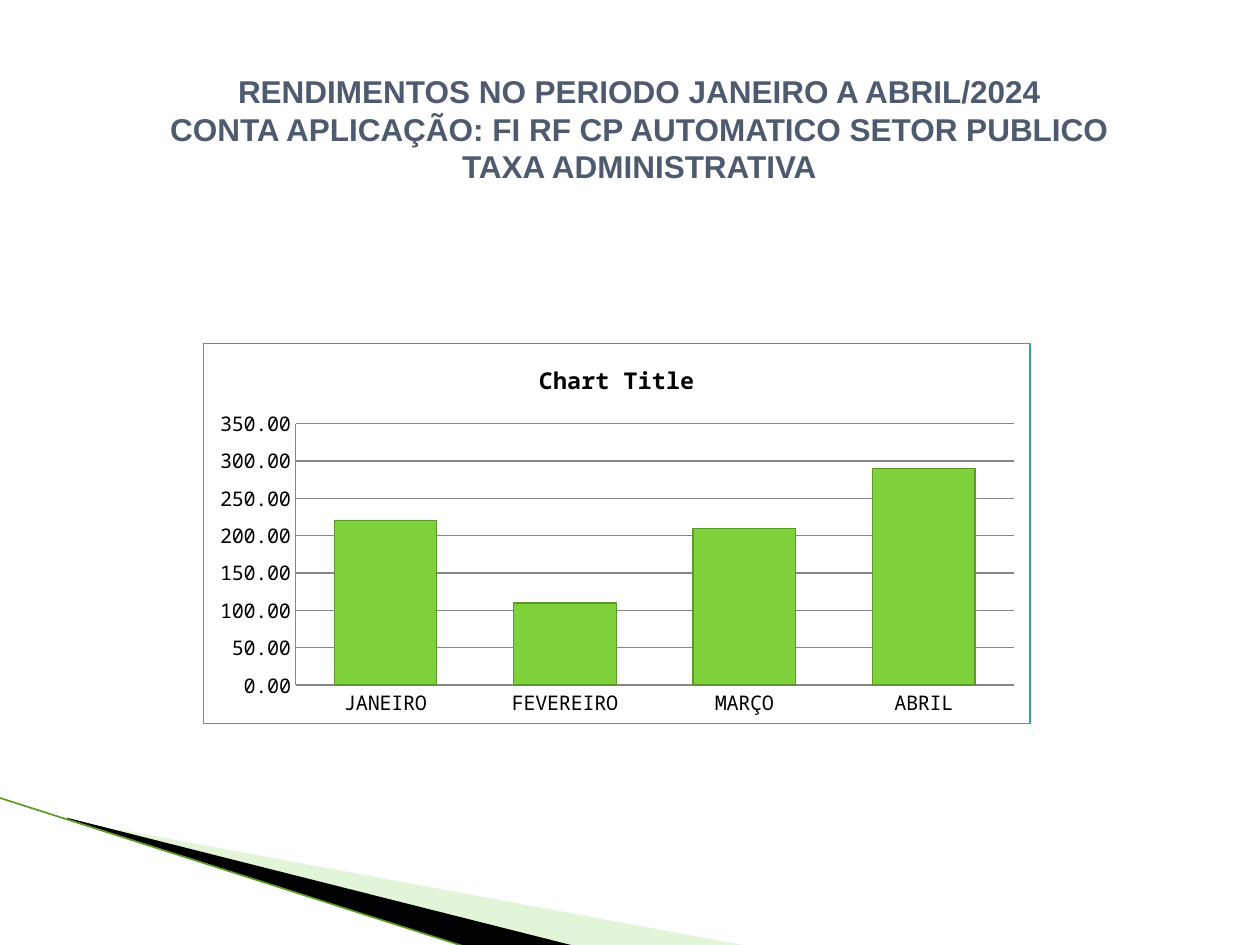
from dataclasses import dataclass

from lxml.etree import SubElement
from pptx import Presentation
from pptx.chart.data import CategoryChartData
from pptx.dml.color import RGBColor
from pptx.enum.chart import XL_CHART_TYPE, XL_TICK_MARK
from pptx.enum.shapes import MSO_CONNECTOR
from pptx.enum.text import MSO_ANCHOR, MSO_AUTO_SIZE, PP_ALIGN
from pptx.oxml import parse_xml
from pptx.oxml.ns import nsdecls, qn
from pptx.util import Inches, Pt


@dataclass(frozen=True)
class Theme:
    title_font: str = "Arial"
    chart_font: str = "Noto Sans Mono"
    title_size: float = 18
    chart_title_size: float = 13.3
    chart_size: float = 11.5
    title_color: str = "4E5B6F"
    text_color: str = "000000"
    bar: str = "7FD13B"
    bar_line: str = "5B9A28"
    grid: str = "868686"
    border: str = "2DA2BF"
    pale_wedge: str = "B8E7A1"
    dark_wedge: str = "000000"
    edge: str = "5B9A28"


THEME = Theme()
TITLE_LINES = [
    "RENDIMENTOS NO PERIODO JANEIRO A ABRIL/2024",
    "CONTA APLICAÇÃO: FI RF CP AUTOMATICO SETOR PUBLICO",
    "TAXA ADMINISTRATIVA",
]
MONTHLY_YIELD = {"JANEIRO": 220, "FEVEREIRO": 110, "MARÇO": 210, "ABRIL": 290}


def color(value):
    return RGBColor.from_string(value)


def style_line(line, value, width):
    line.color.rgb = color(value)
    line.width = Pt(width)


def style_font(font, name, size, value, bold=False):
    font.name, font.size, font.bold = name, Pt(size), bold
    font.color.rgb = color(value)


def add_wedge(slide, points, fill, opacity=100):
    """Draw a closed, unlined outline through points given in inches."""
    corners = [(Inches(x), Inches(y)) for x, y in points]
    builder = slide.shapes.build_freeform(*corners[0])
    builder.add_line_segments(corners[1:], close=True)
    shape = builder.convert_to_shape()
    shape.shadow.inherit = False
    shape.fill.solid()
    shape.fill.fore_color.rgb = color(fill)
    shape.line.fill.background()
    if opacity < 100:
        fill_color = shape.fill._xPr.find(qn("a:solidFill"))[0]
        SubElement(fill_color, qn("a:alpha")).set("val", str(opacity * 1000))


def add_corner_decoration(slide, left, top, width, height):
    right, bottom = left + width, top + height
    add_wedge(slide, [(left + 0.56, top + 0.18), (right, bottom),
                      (left + 4.57, bottom), (left + 0.56, top + 0.17)],
              THEME.pale_wedge, opacity=40)
    add_wedge(slide, [(left + 0.54, top + 0.16), (left + 4.58, bottom),
                      (left + 3.73, bottom + 0.01), (left + 0.55, top + 0.17)],
              THEME.dark_wedge)
    edge = slide.shapes.add_connector(
        MSO_CONNECTOR.STRAIGHT, Inches(left), Inches(top),
        Inches(left + 3.72), Inches(bottom + 0.01))
    style_line(edge.line, THEME.edge, 0.95)
    SubElement(edge._element.spPr, qn("a:effectLst"))


def add_title(slide, left, top, width, height):
    title = slide.shapes.title
    title.left, title.top = Inches(left), Inches(top)
    title.width, title.height = Inches(width), Inches(height)
    frame = title.text_frame
    frame.text = "\n".join(TITLE_LINES)
    frame.word_wrap = True
    frame.auto_size = MSO_AUTO_SIZE.SHAPE_TO_FIT_TEXT
    frame.vertical_anchor = MSO_ANCHOR.TOP
    for paragraph in frame.paragraphs:
        paragraph.alignment = PP_ALIGN.CENTER
        paragraph.space_before = Pt(0)
        style_font(paragraph.font, THEME.title_font, THEME.title_size,
                   THEME.title_color, bold=True)


def add_chart_border(chart):
    chart_space = chart._chartSpace
    border = parse_xml(
        f'<c:spPr {nsdecls("c", "a")}><a:noFill/><a:ln w="{Pt(0.75)}"><a:solidFill>'
        f'<a:srgbClr val="{THEME.border}"/></a:solidFill></a:ln></c:spPr>')
    chart_space.find(qn("c:chart")).addnext(border)


def add_yield_chart(slide, left, top, width, height):
    data = CategoryChartData(number_format="#,##0.00")
    data.categories = list(MONTHLY_YIELD)
    data.add_series("Series 1", list(MONTHLY_YIELD.values()))
    chart = slide.shapes.add_chart(
        XL_CHART_TYPE.COLUMN_CLUSTERED, Inches(left), Inches(top),
        Inches(width), Inches(height), data).chart
    style_font(chart.font, THEME.chart_font, THEME.chart_size, THEME.text_color)
    add_chart_border(chart)
    chart.has_legend = False
    chart.has_title = True
    chart.chart_title.include_in_layout = False
    heading = chart.chart_title.text_frame
    heading.text = "Chart Title"
    style_font(heading.paragraphs[0].font, THEME.chart_font,
               THEME.chart_title_size, THEME.text_color, bold=True)

    for axis in (chart.category_axis, chart.value_axis):
        axis.major_tick_mark = axis.minor_tick_mark = XL_TICK_MARK.NONE
        style_line(axis.format.line, THEME.grid, 0.75)
    values = chart.value_axis
    values.minimum_scale, values.maximum_scale, values.major_unit = 0, 350, 50
    values.tick_labels.number_format = "#,##0.00"
    values.tick_labels.number_format_is_linked = False
    values.has_major_gridlines = True
    style_line(values.major_gridlines.format.line, THEME.grid, 0.75)

    plot = chart.plots[0]
    plot.gap_width = 75
    plot.vary_by_categories = False
    bars = plot.series[0].format
    bars.fill.solid()
    bars.fill.fore_color.rgb = color(THEME.bar)
    style_line(bars.line, THEME.bar_line, 0.75)


def main():
    presentation = Presentation()
    presentation.slide_width, presentation.slide_height = Inches(10), Inches(7.5)
    slide = presentation.slides.add_slide(presentation.slide_layouts.get_by_name("Title Only"))
    add_corner_decoration(slide, -0.01, 6.33, 5.96, 1.18)
    add_title(slide, 0.9, 0.52, 8.35, 1.01)
    add_yield_chart(slide, 1.61, 2.72, 6.57, 3.03)
    presentation.save("out.pptx")


if __name__ == "__main__":
    main()
